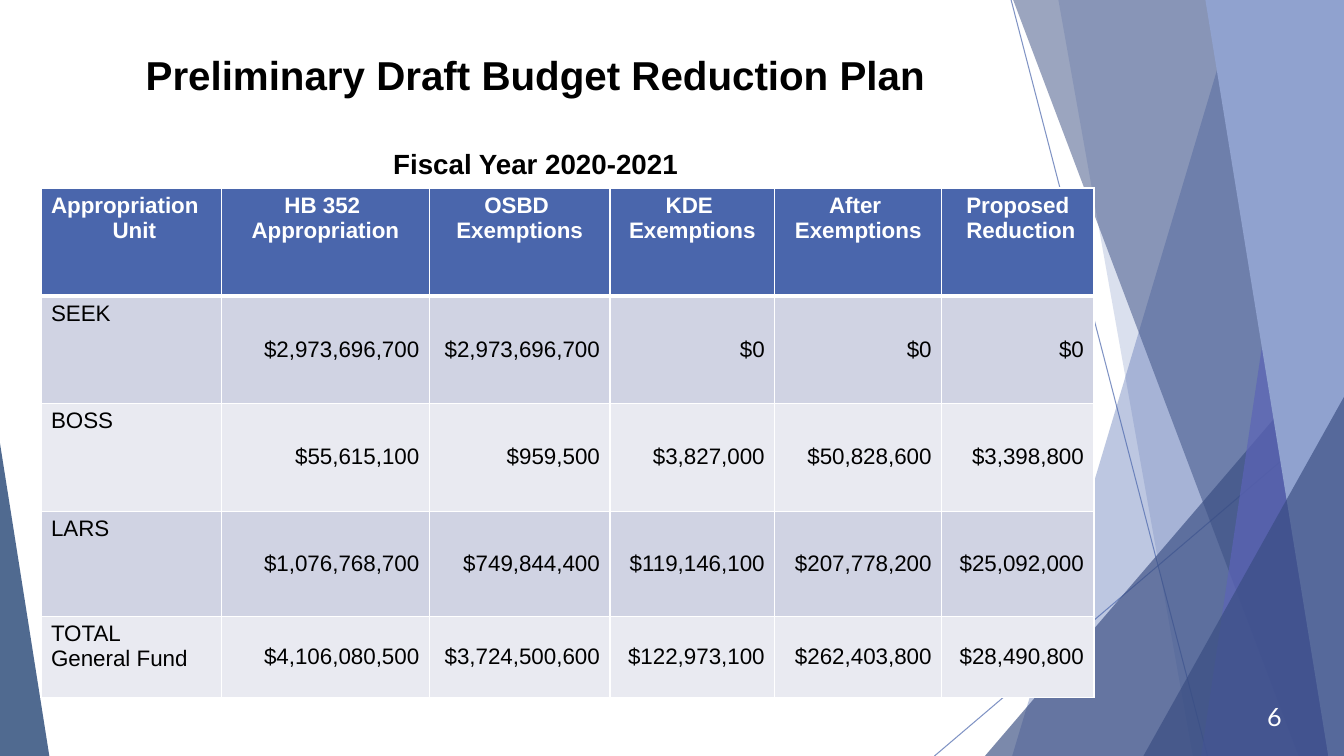
from dataclasses import dataclass

from lxml.etree import SubElement
from pptx import Presentation
from pptx.dml.color import RGBColor
from pptx.dml.fill import FillFormat
from pptx.enum.shapes import MSO_CONNECTOR, MSO_SHAPE
from pptx.enum.text import MSO_ANCHOR, PP_ALIGN
from pptx.oxml.ns import qn
from pptx.shapes.base import BaseShape
from pptx.slide import Slide
from pptx.table import _Cell as Cell
from pptx.text.text import TextFrame
from pptx.util import Emu, Pt

PX = 9525
WIDTH, HEIGHT = 1280, 720
BLUE, NAVY, WHITE, BLACK = "4A66AC", "384C81", "FFFFFF", "000000"


@dataclass(frozen=True)
class Ray:
    """A thin line from one point to another."""
    start: tuple[int, int]
    end: tuple[int, int]


@dataclass(frozen=True)
class Band:
    """A full-height panel with a slanted left edge, reaching the right edge."""
    top_x: int
    bottom_x: int
    color: str
    opacity: int


@dataclass(frozen=True)
class Peak:
    """A triangle standing on the bottom edge, its apex at a share of its width."""
    left: int
    top: int
    width: int
    apex: int
    color: str
    opacity: int


@dataclass(frozen=True)
class Line:
    """One paragraph of a text box."""
    text: str
    size: float
    font: str
    color: str
    bold: bool = False
    space_before: int = 0


RAYS = [Ray((963, 0), (1150, 720)), Ray((1280, 388), (890, 720))]
FACETS = [
    Band(1179, 964, BLUE, 36),
    Band(1008, 1136, BLUE, 20),
    Peak(938, 321, 342, 1, NAVY, 66),
    Band(965, 1237, NAVY, 50),
    Band(1251, 1144, "5C64B7", 70),
    Band(1148, 1265, "90A2CF", 100),
    Peak(1089, 378, 191, 1, NAVY, 66),
    Peak(0, 422, 47, 0, "072C62", 70),
]
TITLE = [
    Line("Preliminary Draft Budget Reduction Plan", 28.8, "Arial", BLACK, True),
    Line("Fiscal Year 2020-2021", 19.8, "Arial", BLACK, True, 34),
]
PAGE_NUMBER = [Line("6", 18, "Lato", WHITE)]
COLUMN_WIDTHS = [172, 198, 172, 157, 159, 145]
ROW_HEIGHTS = [103, 102, 103, 100, 77]
BUDGET = [
    ["Appropriation\n Unit", "HB 352 \nAppropriation", "OSBD \nExemptions",
     "KDE \vExemptions", "After \nExemptions", "Proposed\n Reduction"],
    ["SEEK", "$2,973,696,700", "$2,973,696,700", "$0", "$0", "$0"],
    ["BOSS", "$55,615,100", "$959,500", "$3,827,000", "$50,828,600", "$3,398,800"],
    ["LARS", "$1,076,768,700", "$749,844,400", "$119,146,100", "$207,778,200", "$25,092,000"],
    ["TOTAL\nGeneral Fund", "$4,106,080,500", "$3,724,500,600", "$122,973,100",
     "$262,403,800", "$28,490,800"],
]


def px(*lengths: int) -> list[Emu]:
    """Turn pixel lengths into EMU."""
    return [Emu(length * PX) for length in lengths]


def rgb(color: str) -> RGBColor:
    """Turn a hex string into a colour."""
    return RGBColor.from_string(color)


def paint(fill: FillFormat, color: str) -> None:
    """Give a fill one solid colour."""
    fill.solid()
    fill.fore_color.rgb = rgb(color)


def set_opacity(shape: BaseShape, percent: int) -> None:
    """Make the shape's own colour partly transparent."""
    for color in shape.element.spPr.xpath(".//a:srgbClr"):
        SubElement(color, qn("a:alpha"), val=str(percent * 1000))


def draw_ray(slide: Slide, ray: Ray) -> None:
    """Draw one thin line."""
    connector = slide.shapes.add_connector(MSO_CONNECTOR.STRAIGHT, *px(*ray.start, *ray.end))
    connector.line.color.rgb = rgb(BLUE)
    connector.line.width = Pt(0.75)
    set_opacity(connector, 70)
    SubElement(connector.element.spPr, qn("a:effectLst"))


def draw_facet(slide: Slide, facet: Band | Peak) -> None:
    """Draw one translucent panel or triangle."""
    if isinstance(facet, Band):
        builder = slide.shapes.build_freeform(facet.top_x, 0, scale=PX)
        builder.add_line_segments([(WIDTH, 0), (WIDTH, HEIGHT), (facet.bottom_x, HEIGHT)])
        shape = builder.convert_to_shape()
    else:
        shape = slide.shapes.add_shape(
            MSO_SHAPE.ISOSCELES_TRIANGLE,
            *px(facet.left, facet.top, facet.width, HEIGHT - facet.top))
        shape.adjustments[0] = facet.apex
    shape.shadow.inherit = False
    shape.line.fill.background()
    paint(shape.fill, facet.color)
    if facet.opacity < 100:
        set_opacity(shape, facet.opacity)


def draw_text(slide: Slide, box: tuple[int, int, int, int], lines: list[Line],
              alignment: PP_ALIGN) -> None:
    """Draw a vertically centred text box."""
    frame = slide.shapes.add_textbox(*px(*box)).text_frame
    frame.word_wrap = True
    frame.vertical_anchor = MSO_ANCHOR.MIDDLE
    frame.text = "\n".join(line.text for line in lines)
    for paragraph, line in zip(frame.paragraphs, lines):
        paragraph.alignment = alignment
        if line.space_before:
            paragraph.space_before = Pt(line.space_before)
        style_font(paragraph.font, line.font, line.size, line.color, line.bold)


def style_font(font, name: str, size: float, color: str, bold: bool) -> None:
    """Set the face, size, colour and weight of a font."""
    font.name, font.size, font.bold = name, Pt(size), bold
    font.color.rgb = rgb(color)


def add_borders(cell: Cell, top: int, bottom: int) -> None:
    """Outline a cell in white, with widths in points."""
    properties = cell._tc.get_or_add_tcPr()
    for side, width in {"L": 1, "R": 1, "T": top, "B": bottom}.items():
        border = SubElement(properties, qn(f"a:ln{side}"), w=str(Pt(width)))
        solid = SubElement(border, qn("a:solidFill"))
        SubElement(solid, qn("a:srgbClr"), val=WHITE)


def align_cell(frame: TextFrame, row: int, column: int) -> None:
    """Centre the headings, and set names left and amounts right."""
    for index, paragraph in enumerate(frame.paragraphs):
        if row == 0:
            paragraph.alignment = PP_ALIGN.CENTER if column or index else PP_ALIGN.LEFT
        else:
            paragraph.alignment = PP_ALIGN.RIGHT if column else PP_ALIGN.LEFT
        style_font(paragraph.font, "Arial", 16, BLACK if row else WHITE, row == 0)


def draw_budget(slide: Slide) -> None:
    """Draw the budget table."""
    table = slide.shapes.add_table(
        len(ROW_HEIGHTS), len(COLUMN_WIDTHS),
        *px(39, 179, sum(COLUMN_WIDTHS), sum(ROW_HEIGHTS))).table
    for column, width in zip(table.columns, px(*COLUMN_WIDTHS)):
        column.width = width
    for row, height in zip(table.rows, px(*ROW_HEIGHTS)):
        row.height = height
    for row, texts in enumerate(BUDGET):
        for column, text in enumerate(texts):
            cell = table.cell(row, column)
            add_borders(cell, top=3 if row == 1 else 1, bottom=1 if row else 3)
            paint(cell.fill, ("D0D3E3" if row % 2 else "E9EAF1") if row else BLUE)
            cell.vertical_anchor = MSO_ANCHOR.MIDDLE if row and column else MSO_ANCHOR.TOP
            cell.text_frame.text = text
            align_cell(cell.text_frame, row, column)


def main() -> None:
    """Build and save the slide."""
    presentation = Presentation()
    presentation.slide_width, presentation.slide_height = px(WIDTH, HEIGHT)
    slide = presentation.slides.add_slide(presentation.slide_layouts[6])
    for ray in RAYS:
        draw_ray(slide, ray)
    for facet in FACETS:
        draw_facet(slide, facet)
    draw_text(slide, (59, 27, 902, 165), TITLE, PP_ALIGN.CENTER)
    draw_text(slide, (1158, 663, 72, 38), PAGE_NUMBER, PP_ALIGN.RIGHT)
    draw_budget(slide)
    presentation.save("out.pptx")


if __name__ == "__main__":
    main()
